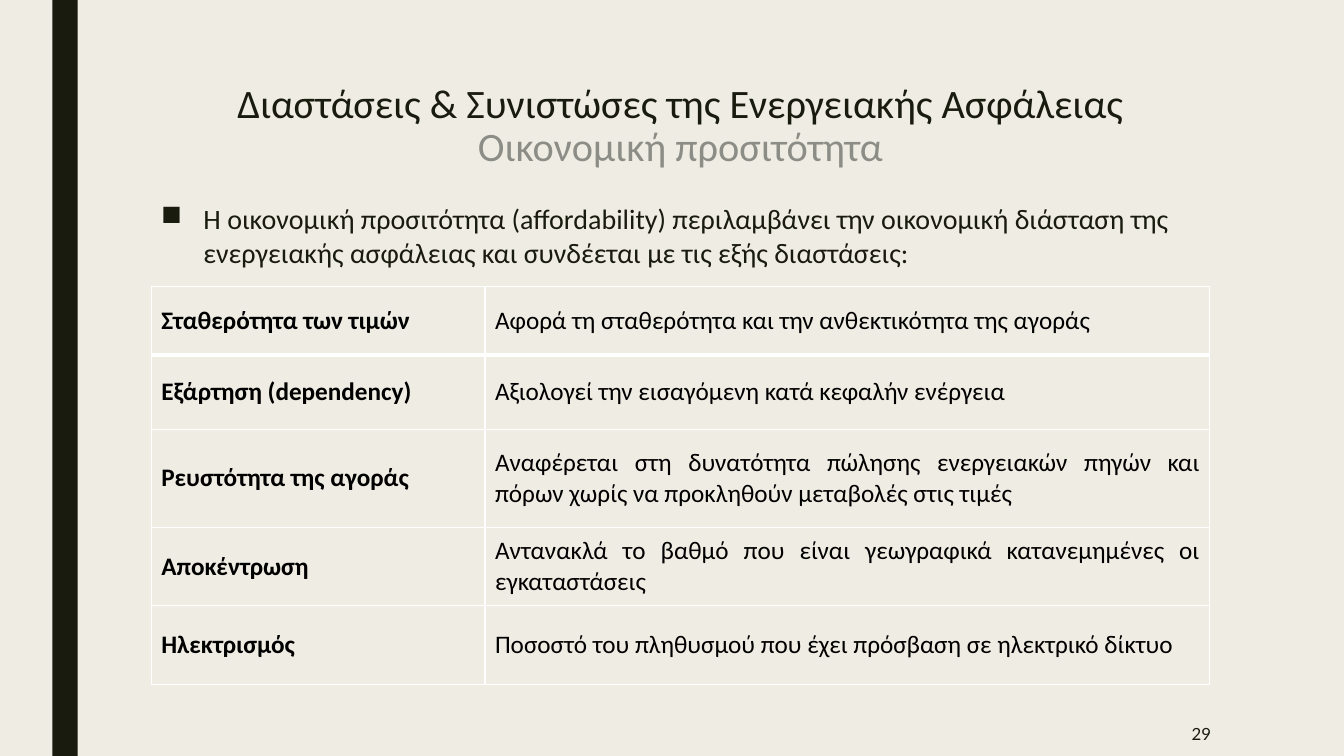
"""Builds a slide on the affordability dimension of energy security."""
from lxml import etree
from pptx import Presentation
from pptx import util as u
from pptx.dml.color import RGBColor
from pptx.enum import shapes, text
from pptx.oxml.ns import qn

INK, MUTED, PAPER, WHITE, BLACK = "191B0E", "8C8D86", "EFEDE3", "FFFFFF", "000000"
ALIGN, ANCHOR = text.PP_ALIGN, text.MSO_ANCHOR

DIMENSIONS = [
    (0.68, "Σταθερότητα των τιμών", "Αφορά τη σταθερότητα και την ανθεκτικότητα της αγοράς"),
    (0.74, "Εξάρτηση (dependency)", "Αξιολογεί την εισαγόμενη κατά κεφαλήν ενέργεια"),
    (0.97, "Ρευστότητα της αγοράς",
     "Αναφέρεται στη δυνατότητα πώλησης ενεργειακών πηγών και πόρων "
     "χωρίς να προκληθούν μεταβολές στις τιμές"),
    (0.78, "Αποκέντρωση",
     "Αντανακλά το βαθμό που είναι γεωγραφικά κατανεμημένες οι εγκαταστάσεις"),
    (0.78, "Ηλεκτρισμός", "Ποσοστό του πληθυσμού που έχει πρόσβαση σε ηλεκτρικό δίκτυο"),
]


def color(hex_string):
    return RGBColor.from_string(hex_string)


def write(paragraph, words, size=18, fill=INK, font="Calibri", bold=False, align=ALIGN.LEFT):
    paragraph.alignment = align
    run = paragraph.add_run()
    run.text = words
    run.font.size, run.font.name, run.font.bold = u.Pt(size), font, bold
    run.font.color.rgb = color(fill)


def set_border(cell, side, width):
    line = etree.SubElement(cell._tc.get_or_add_tcPr(), qn(f"a:ln{side}"), w=str(u.Pt(width)))
    fill = etree.SubElement(line, qn("a:solidFill"))
    etree.SubElement(fill, qn("a:srgbClr"), val=WHITE)


class Deck:
    def __init__(self):
        self.presentation = Presentation()
        self.presentation.slide_width = u.Inches(13.33)
        self.presentation.slide_height = u.Inches(7.5)
        self.slide = self.presentation.slides.add_slide(self.presentation.slide_layouts[5])
        background = self.slide.background.fill
        background.solid()
        background.fore_color.rgb = color(PAPER)

    def bar(self, *place):
        stripe = self.slide.shapes.add_shape(shapes.MSO_SHAPE.RECTANGLE, *map(u.Inches, place))
        stripe.shadow.inherit = False
        stripe.fill.solid()
        stripe.fill.fore_color.rgb = color(INK)
        stripe.line.fill.background()

    def title(self, heading, subheading, *place):
        title = self.slide.shapes.title
        title.left, title.top, title.width, title.height = map(u.Inches, place)
        title.text_frame.vertical_anchor = ANCHOR.MIDDLE
        paragraph = title.text_frame.paragraphs[0]
        paragraph.line_spacing = 0.89
        write(paragraph, heading, size=28.8, align=ALIGN.CENTER)
        paragraph.add_line_break()
        write(paragraph, subheading, size=28.8, fill=MUTED, align=ALIGN.CENTER)

    def textbox(self, words, *place, anchor=ANCHOR.TOP, **style):
        frame = self.slide.shapes.add_textbox(*map(u.Inches, place)).text_frame
        frame.word_wrap = True
        frame.vertical_anchor = anchor
        write(frame.paragraphs[0], words, **style)
        return frame.paragraphs[0]

    def bullet(self, words, *place, **style):
        paragraph = self.textbox(words, *place, **style)
        paragraph.space_before, paragraph.space_after = u.Pt(10), u.Pt(2)
        properties = paragraph._p.get_or_add_pPr()
        indent = u.Inches(0.42)
        properties.set("marL", str(indent))
        properties.set("indent", str(-indent))
        etree.SubElement(properties, qn("a:buChar"), char="■")

    def table(self, records, widths, *place):
        table = self.slide.shapes.add_table(
            len(records), len(widths), *map(u.Inches, place)).table
        table.horz_banding = False
        for column, width in zip(table.columns, widths):
            column.width = u.Inches(width)
        for index, (height, *entries) in enumerate(records):
            table.rows[index].height = u.Inches(height)
            for position, words in enumerate(entries):
                cell = table.cell(index, position)
                cell.vertical_anchor = ANCHOR.MIDDLE
                write(cell.text_frame.paragraphs[0], words, fill=BLACK, bold=position == 0,
                      align=ALIGN.JUSTIFY if position else ALIGN.LEFT)
                for side in "LRTB":
                    thick = (index, side) in ((0, "B"), (1, "T"))
                    set_border(cell, side, 3 if thick else 1)
                cell.fill.background()


def main():
    deck = Deck()
    deck.bar(0.52, 0, 0.25, 7.5)
    deck.title("Διαστάσεις & Συνιστώσες της Ενεργειακής Ασφάλειας", "Οικονομική προσιτότητα",
               1.5, 0.75, 10.5, 1.02)
    deck.bullet("Η οικονομική προσιτότητα (affordability) περιλαμβάνει την οικονομική διάσταση "
                "της ενεργειακής ασφάλειας και συνδέεται με τις εξής διαστάσεις:",
                1.5, 1.95, 10.5, 0.85, size=20)
    deck.table(DIMENSIONS, (3.31, 7.19), 1.5, 2.84, 10.5, 3.95)
    deck.textbox("29", 10.36, 7.06, 1.75, 0.44, anchor=ANCHOR.MIDDLE,
                 size=12, font="Lato", align=ALIGN.RIGHT)
    deck.presentation.save("out.pptx")


if __name__ == "__main__":
    main()
